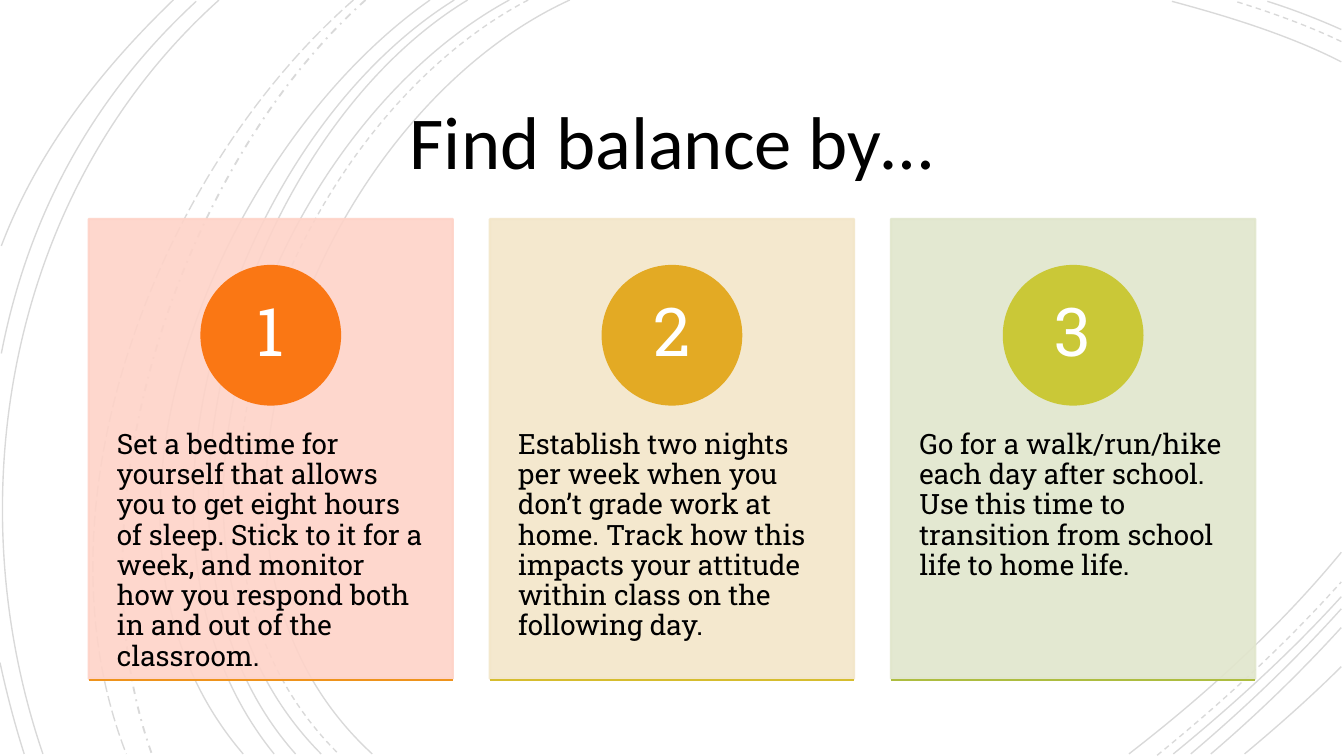
from dataclasses import dataclass
from typing import Optional

from lxml import etree
from pptx import Presentation
from pptx import util as u
from pptx.dml.color import RGBColor
from pptx.enum import dml, shapes, text
from pptx.oxml import ns

DASH = dml.MSO_LINE.DASH
DASH_DOT = dml.MSO_LINE.DASH_DOT
LONG_DASH = dml.MSO_LINE.LONG_DASH
BODY_FONT = "Roboto Slab"
SLIDE_WIDTH = u.Inches(10)
SLIDE_HEIGHT = SLIDE_WIDTH * 9 // 16
FIRST_LEFT, LAST_LEFT, CARD_TOP = 0.66, 6.63, 1.63
CARD_WIDTH, CARD_HEIGHT, RULE_TOP = 2.71, 3.42, 5.06
CIRCLE_SIZE, CIRCLE_TOP, NUMBER_SIZE = 1.03, 1.98, 0.73
ADVICE_TOP = 2.93


@dataclass
class Arc:
    points: tuple
    dash: Optional[dml.MSO_LINE] = None
    weight: float = 0.75


@dataclass
class Card:
    advice: str
    panel: str
    circle: str
    rule: str


ARCS = [
    Arc(((4.24, 0), (2.36, 0.86), (1.07, 4.05), (2.77, 5.61))),
    Arc(((9.98, 0.46), (9.59, 0.26), (9.13, 0.12), (8.72, 0.01))),
    Arc(((8.4, 5.61), (8.97, 5.17), (9.52, 4.67), (9.98, 4.11))),
    Arc(((3.93, 0), (2.13, 0.94), (0.92, 4.03), (2.52, 5.61)), DASH),
    Arc(((9.98, 0.31), (9.73, 0.19), (9.45, 0.09), (9.19, 0.01)), DASH),
    Arc(((8.61, 5.62), (9.09, 5.23), (9.56, 4.8), (9.98, 4.33)), DASH),
    Arc(((3.79, 0), (2.02, 0.96), (0.82, 4.03), (2.39, 5.61))),
    Arc(((9.98, 0.22), (9.8, 0.14), (9.62, 0.07), (9.43, 0.01))),
    Arc(((8.73, 5.61), (9.17, 5.25), (9.6, 4.86), (9.98, 4.44))),
    Arc(((3.48, 0), (1.83, 1), (0.82, 4.06), (2.2, 5.61))),
    Arc(((8.86, 5.61), (9.25, 5.28), (9.63, 4.92), (9.98, 4.53))),
    Arc(((3.38, 0), (1.73, 1.03), (0.73, 4), (2.04, 5.61))),
    Arc(((9.01, 5.61), (9.35, 5.32), (9.68, 5), (9.98, 4.67))),
    Arc(((3.2, 0), (1.63, 1.1), (0.4, 3.97), (1.81, 5.61))),
    Arc(((9.26, 5.61), (9.5, 5.41), (9.75, 5.19), (9.98, 4.96))),
    Arc(((2.72, 0), (1.32, 1.25), (0.49, 3.82), (1.13, 5.61)), DASH_DOT, 1),
    Arc(((2.63, 0), (1.18, 1.27), (0.21, 3.74), (0.94, 5.61)), LONG_DASH),
    Arc(((1.63, 0), (0.08, 1.39), (-0.34, 3.68), (0.32, 5.61))),
    Arc(((1.46, 0.01), (0.69, 0.72), (0.21, 1.6), (0.01, 2.63))),
    Arc(((0, 4.93), (0.05, 5.16), (0.11, 5.39), (0.18, 5.61))),
    Arc(((1.29, 0), (0.75, 0.52), (0.28, 1.12), (0.01, 1.83))),
]

CARDS = [
    Card("Set a bedtime for yourself that allows you to get eight hours of sleep. "
         "Stick to it for a week, and monitor how you respond both in and out of "
         "the classroom.", "FED3C8", "FA7714", "EE931C"),
    Card("Establish two nights per week when you don’t grade work at home. Track "
         "how this impacts your attitude within class on the following day.",
         "F3E6C9", "E3AA24", "D6BD2E"),
    Card("Go for a walk/run/hike each day after school. Use this time to "
         "transition from school life to home life.", "E1E6CC", "CAC837", "ADBD40"),
]


def paint(fill, color: str) -> None:
    fill.solid()
    fill.fore_color.rgb = RGBColor.from_string(color)


def set_opacity(shape, percent: int) -> None:
    for color in shape.element.spPr.iter(ns.qn("a:srgbClr")):
        etree.SubElement(color, ns.qn("a:alpha"), val=str(percent * 1000))


def write(shape, words: str, *, size: float, color: str = "000000",
          font: str = BODY_FONT, spacing: float = 0.9, align=text.PP_ALIGN.LEFT,
          anchor=text.MSO_ANCHOR.TOP, inset_x: float, inset_y: float) -> None:
    frame = shape.text_frame
    frame.auto_size = text.MSO_AUTO_SIZE.NONE
    frame.word_wrap = True
    frame.vertical_anchor = anchor
    frame.margin_left = frame.margin_right = u.Inches(inset_x)
    frame.margin_top = frame.margin_bottom = u.Inches(inset_y)
    paragraph = frame.paragraphs[0]
    paragraph.alignment = align
    paragraph.line_spacing = spacing
    run = paragraph.add_run()
    run.text = words
    run.font.size = u.Pt(size)
    run.font.name = font
    paint(run.font.fill, color)


def draw_arc(group, arc: Arc) -> None:
    start, *rest = [(u.Inches(x), u.Inches(y)) for x, y in arc.points]
    builder = group.shapes.build_freeform(*start)
    builder.add_line_segments(rest, close=False)
    curve = builder.convert_to_shape()
    curve.shadow.inherit = False
    curve.fill.background()
    paint(curve.line.fill, "000000")
    curve.line.width = u.Pt(arc.weight)
    if arc.dash:
        curve.line.dash_style = arc.dash
    set_opacity(curve, 15)
    segments = list(curve.element.spPr.iter(ns.qn("a:lnTo")))
    bezier = etree.SubElement(segments[0].getparent(), ns.qn("a:cubicBezTo"))
    for segment in segments:
        bezier.append(segment[0])
        segment.getparent().remove(segment)


def draw_block(group, kind, color: str, left: float, top: float,
               width: float, height: float):
    block = group.shapes.add_shape(
        kind, u.Inches(left), u.Inches(top), u.Inches(width), u.Inches(height))
    block.shadow.inherit = False
    paint(block.fill, color)
    paint(block.line.fill, color)
    block.line.width = u.Pt(1.25)
    return block


def draw_card(slide, number: int, card: Card) -> None:
    group = slide.shapes.add_group_shape()
    pitch = (LAST_LEFT - FIRST_LEFT) / (len(CARDS) - 1)
    left = FIRST_LEFT + (number - 1) * pitch
    center = left + CARD_WIDTH / 2
    panel = draw_block(group, shapes.MSO_SHAPE.RECTANGLE, card.panel,
                       left, CARD_TOP, CARD_WIDTH, CARD_HEIGHT)
    set_opacity(panel, 90)
    advice = group.shapes.add_textbox(
        u.Inches(left), u.Inches(ADVICE_TOP), u.Inches(CARD_WIDTH),
        u.Inches(CARD_TOP + CARD_HEIGHT - ADVICE_TOP))
    write(advice, card.advice, size=15, inset_x=0.21, inset_y=0.27)
    draw_block(group, shapes.MSO_SHAPE.OVAL, card.circle,
               center - CIRCLE_SIZE / 2, CIRCLE_TOP, CIRCLE_SIZE, CIRCLE_SIZE)
    numeral = group.shapes.add_textbox(
        u.Inches(center - NUMBER_SIZE / 2),
        u.Inches(CIRCLE_TOP + (CIRCLE_SIZE - NUMBER_SIZE) / 2),
        u.Inches(NUMBER_SIZE), u.Inches(NUMBER_SIZE))
    write(numeral, str(number), size=36, color="FFFFFF",
          align=text.PP_ALIGN.CENTER, anchor=text.MSO_ANCHOR.MIDDLE,
          inset_x=0.08, inset_y=0.01)
    rule = group.shapes.add_connector(
        shapes.MSO_CONNECTOR.STRAIGHT, u.Inches(left), u.Inches(RULE_TOP),
        u.Inches(left + CARD_WIDTH), u.Inches(RULE_TOP))
    paint(rule.line.fill, card.rule)
    rule.line.width = u.Pt(1.25)
    etree.SubElement(rule.element.spPr, ns.qn("a:effectLst"))


def main() -> None:
    deck = Presentation()
    deck.slide_width, deck.slide_height = SLIDE_WIDTH, SLIDE_HEIGHT
    slide = deck.slides.add_slide(deck.slide_layouts[5])
    paint(slide.background.fill, "FFFFFF")

    arcs = slide.shapes.add_group_shape()
    for arc in ARCS:
        draw_arc(arcs, arc)

    title = slide.shapes.title
    arcs.element.addnext(title.element)
    title.left, title.top = u.Inches(1.44), u.Inches(0.66)
    title.width, title.height = u.Inches(7.11), u.Inches(0.86)
    write(title, "Find balance by…", size=40, font="Calibri", spacing=0.85,
          align=text.PP_ALIGN.CENTER, anchor=text.MSO_ANCHOR.MIDDLE,
          inset_x=0.19, inset_y=0.19)

    for number, card in enumerate(CARDS, start=1):
        draw_card(slide, number, card)
    deck.save("out.pptx")


if __name__ == "__main__":
    main()
